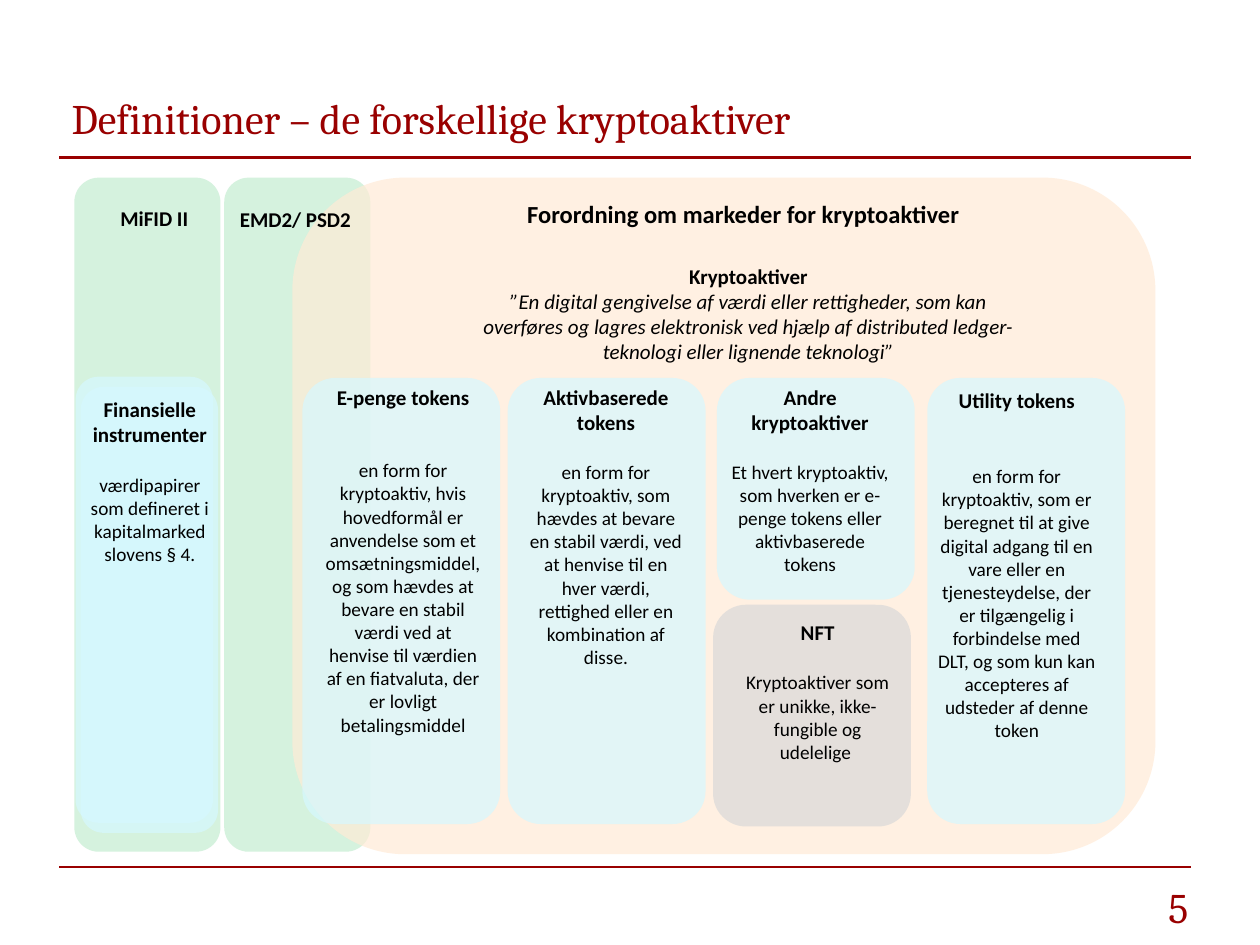
import pptx
import pptx.util
import pptx.dml.color
import pptx.enum.shapes
import pptx.enum.text
from lxml import etree
from pptx.oxml.ns import qn

Inches = pptx.util.Inches
Pt = pptx.util.Pt
RGBColor = pptx.dml.color.RGBColor
Align = pptx.enum.text.PP_ALIGN
Anchor = pptx.enum.text.MSO_ANCHOR

DARK_RED = RGBColor(0x99, 0x00, 0x00)
BLACK = RGBColor(0x00, 0x00, 0x00)
GREEN = RGBColor(0xC4, 0xED, 0xD1)
PEACH = RGBColor(0xFF, 0xEB, 0xD6)
LIGHT_BLUE = RGBColor(0xD6, 0xF8, 0xFF)
GREY = RGBColor(0xD9, 0xD9, 0xD9)

LINE_12 = 14.65  # height in points of one 12 pt line
LINE_11 = 13.43  # height in points of one 11 pt line


class SlideBuilder:
    heading_font = "Cambria"
    body_font = "Calibri"
    opacity = 70

    def __init__(self, slide):
        self.slide = slide

    def rule(self, top):
        line = self.slide.shapes.add_connector(
            pptx.enum.shapes.MSO_CONNECTOR.STRAIGHT,
            Inches(0.47), Inches(top), Inches(9.45), Inches(top))
        line.line.color.rgb = DARK_RED
        line.line.width = Pt(1.25)
        etree.SubElement(line._element.spPr, qn("a:effectLst"))

    def panel(self, left, top, width, height, color):
        shape = self.slide.shapes.add_shape(
            pptx.enum.shapes.MSO_SHAPE.ROUNDED_RECTANGLE,
            Inches(left), Inches(top), Inches(width), Inches(height))
        shape.shadow.inherit = False
        shape.line.fill.background()
        shape.fill.solid()
        shape.fill.fore_color.rgb = color
        color_element = shape._element.spPr.find(".//" + qn("a:srgbClr"))
        alpha = etree.SubElement(color_element, qn("a:alpha"))
        alpha.set("val", str(self.opacity * 1000))

    def text_box(self, left, top, width, height, anchor=Anchor.TOP):
        shape = self.slide.shapes.add_textbox(
            Inches(left), Inches(top), Inches(width), Inches(height))
        shape.text_frame.word_wrap = True
        shape.text_frame.vertical_anchor = anchor
        return shape.text_frame

    def add_text(self, paragraph, text, size, bold=False, italic=False,
                 align=Align.CENTER, font=None, color=BLACK, before=0):
        paragraph.alignment = align
        if before:
            paragraph.space_before = Pt(before)
        run = paragraph.add_run()
        run.text = text
        run.font.name = font or self.body_font
        run.font.size = Pt(size)
        run.font.bold = bold
        run.font.italic = italic
        run.font.color.rgb = color

    def heading(self, left, top, width, height, text, align, anchor):
        frame = self.text_box(left, top, width, height, anchor)
        self.add_text(frame.paragraphs[0], text, 24, align=align,
                      font=self.heading_font, color=DARK_RED)

    def label(self, left, top, width, height, text, size=12):
        frame = self.text_box(left, top, width, height)
        self.add_text(frame.paragraphs[0], text, size, bold=True)
        return frame

    def definition(self, left, top, width, height, name, text, gap=LINE_12):
        frame = self.label(left, top, width, height, name)
        self.add_text(frame.add_paragraph(), text, 11, before=gap)


def main():
    presentation = pptx.Presentation()
    presentation.slide_width = Inches(10)
    presentation.slide_height = Inches(7.5)
    slide = presentation.slides.add_slide(presentation.slide_layouts[6])
    builder = SlideBuilder(slide)

    # Rules, title and page number
    for top in (1.25, 6.88):
        builder.rule(top)
    builder.heading(0.47, 0.59, 9, 0.69,
                    "Definitioner – de forskellige kryptoaktiver",
                    Align.LEFT, Anchor.MIDDLE)
    builder.heading(0.47, 6.95, 9.06, 0.47, "5", Align.RIGHT, Anchor.TOP)

    # Payment rules column, overlapped by the regulation area
    builder.panel(1.78, 1.41, 1.16, 5.35, GREEN)
    builder.panel(2.32, 1.41, 6.85, 5.37, PEACH)
    builder.label(2.63, 1.53, 6.54, 0.34,
                  "Forordning om markeder for kryptoaktiver", 14)
    frame = builder.label(3.58, 2.04, 4.72, 1.11, "Kryptoaktiver")
    for text in (
            "”En digital gengivelse af værdi eller rettigheder, som kan",
            "overføres og lagres elektronisk ved hjælp af distributed "
            "ledger-teknologi eller lignende teknologi”"):
        builder.add_text(frame.add_paragraph(), text, 12, italic=True)

    # Token types
    for left, height in ((2.4, 3.54), (4.03, 3.54), (5.69, 1.76), (7.36, 3.54)):
        builder.panel(left, 3, 1.57, height, LIGHT_BLUE)
    builder.panel(5.66, 4.8, 1.57, 1.76, GREY)
    tokens = (
        (2.47, 3, 2.91, "E-penge tokens",
         "en form for kryptoaktiv, hvis hovedformål er anvendelse som et "
         "omsætningsmiddel, og som hævdes at bevare en stabil værdi ved at "
         "henvise til værdien af en fiatvaluta, der er lovligt betalingsmiddel",
         LINE_12 + LINE_11),
        (4.08, 3, 2.37, "Aktivbaserede tokens",
         "en form for kryptoaktiv, som hævdes at bevare en stabil værdi, ved "
         "at henvise til en hver værdi, rettighed eller en kombination af "
         "disse.", LINE_12),
        (5.7, 3, 1.63, "Andre kryptoaktiver",
         "Et hvert kryptoaktiv, som hverken er e-penge tokens eller "
         "aktivbaserede tokens", LINE_12),
        (7.34, 3.03, 2.93, "Utility tokens",
         "en form for kryptoaktiv, som er beregnet til at give digital adgang "
         "til en vare eller en tjenesteydelse, der er tilgængelig i "
         "forbindelse med DLT, og som kun kan accepteres af udsteder af denne "
         "token", 2 * LINE_12),
        (5.76, 4.87, 1.25, "NFT",
         "Kryptoaktiver som er unikke, ikke-fungible og udelelige ", LINE_12),
    )
    for left, top, height, name, text, gap in tokens:
        builder.definition(left, top, 1.46, height, name, text, gap)
    builder.label(1.76, 1.59, 1.17, 0.3, "EMD2/ PSD2")

    # Financial instruments column
    builder.panel(0.59, 1.41, 1.16, 5.35, GREEN)
    builder.label(0.64, 1.58, 1.17, 0.3, "MiFID II")
    for left, top in ((0.6, 2.99), (0.64, 3.07)):
        builder.panel(left, top, 1.09, 3.54, LIGHT_BLUE)
    builder.definition(0.62, 3.1, 1.14, 1.45, "Finansielle instrumenter ",
                       "værdipapirer som defineret i "
                       "kapitalmarkedslovens § 4.")

    presentation.save("out.pptx")


if __name__ == "__main__":
    main()
